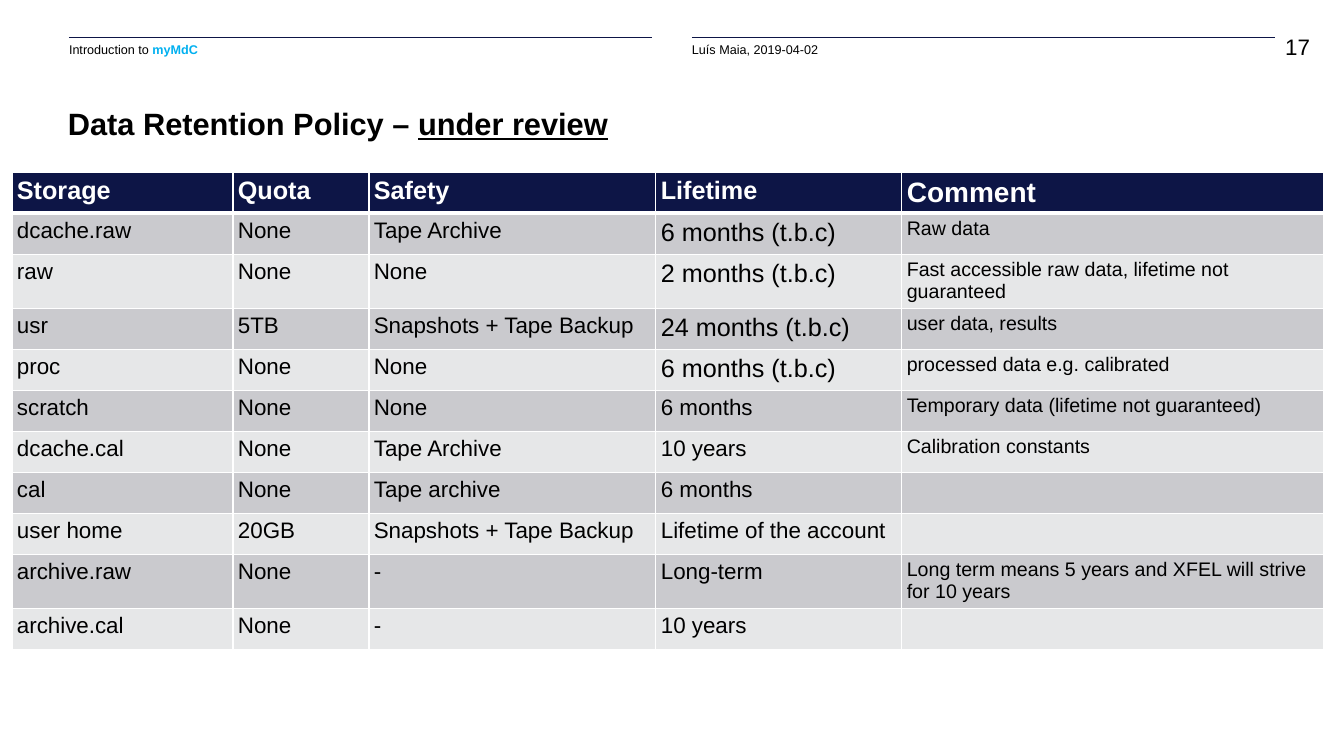
from pptx import Presentation
from pptx.dml.color import RGBColor
from pptx.enum.shapes import MSO_CONNECTOR
from pptx.enum.text import MSO_ANCHOR, MSO_AUTO_SIZE, PP_ALIGN
from pptx.oxml.ns import qn
from pptx.util import Emu, Pt
from lxml import etree

STRAIGHT = MSO_CONNECTOR.STRAIGHT
LEFT, RIGHT = PP_ALIGN.LEFT, PP_ALIGN.RIGHT
TOP, BOTTOM = MSO_ANCHOR.TOP, MSO_ANCHOR.BOTTOM
NO_AUTOFIT = MSO_AUTO_SIZE.NONE

NAVY = RGBColor(0x0D, 0x15, 0x46)
CYAN = RGBColor(0x00, 0xB0, 0xF0)
BLACK = RGBColor(0x00, 0x00, 0x00)
WHITE = RGBColor(0xFF, 0xFF, 0xFF)
DARK_BAND = RGBColor(0xCA, 0xCA, 0xCE)
LIGHT_BAND = RGBColor(0xE6, 0xE7, 0xE8)

FONT = "Arial"
PX_PER_INCH = 100.8
CELL_MARGIN = 5
ROW_HEIGHT = 41
COLUMN_WIDTHS = (221, 136, 287, 246, 422)
HEADER_SIZES = (18, 18, 18, 18, 20)
BODY_SIZES = (16, 16, 16, 16, 14)
TO_CONFIRM = "(t.b.c)"
TO_CONFIRM_SIZE = 18

POLICY = (
    ("Storage", "Quota", "Safety", "Lifetime", "Comment"),
    ("dcache.raw", "None", "Tape Archive", "6 months (t.b.c)", "Raw data"),
    ("raw", "None", "None", "2 months (t.b.c)",
     "Fast accessible raw data, lifetime not guaranteed"),
    ("usr", "5TB", "Snapshots + Tape Backup", "24 months (t.b.c)",
     "user data, results"),
    ("proc", "None", "None", "6 months (t.b.c)",
     "processed data e.g. calibrated"),
    ("scratch", "None", "None", "6 months",
     "Temporary data (lifetime not guaranteed)"),
    ("dcache.cal", "None", "Tape Archive", "10 years",
     "Calibration constants"),
    ("cal", "None", "Tape archive", "6 months", ""),
    ("user home", "20GB", "Snapshots + Tape Backup",
     "Lifetime of the account", ""),
    ("archive.raw", "None", "-", "Long-term",
     "Long term means 5 years and XFEL will strive for 10 years"),
    ("archive.cal", "None", "-", "10 years", ""),
)


def px(n):
    return Emu(round(n * 914400 / PX_PER_INCH))


def add_run(p, text, size, color=BLACK, bold=False, underline=False):
    r = p.add_run()
    r.text = text
    r.font.name = FONT
    r.font.size = Pt(size)
    r.font.color.rgb = color
    r.font.bold = bold
    r.font.underline = underline


def prepare_frame(tf, anchor=TOP, align=LEFT, wrap=True):
    """Remove the insets and return the first paragraph."""
    tf.margin_left = tf.margin_top = tf.margin_right = tf.margin_bottom = 0
    tf.auto_size = NO_AUTOFIT
    tf.word_wrap = wrap
    tf.vertical_anchor = anchor
    p = tf.paragraphs[0]
    p.alignment = align
    return p


def add_label(s, x, y, w, h, align=LEFT, wrap=True):
    """Add an empty text box and return its paragraph."""
    tf = s.shapes.add_textbox(px(x), px(y), px(w), px(h)).text_frame
    return prepare_frame(tf, align=align, wrap=wrap)


def add_rule(s, x, y, w):
    line = s.shapes.add_connector(STRAIGHT, px(x), px(y), px(x + w), px(y))
    line.line.color.rgb = NAVY
    line.line.width = Pt(0.5)
    etree.SubElement(line._element.spPr, qn("a:effectLst"))


def add_title(s):
    title = s.shapes.title
    title.left, title.top, title.width, title.height = (
        px(68), px(56), px(1208), px(86))
    p = prepare_frame(title.text_frame, anchor=BOTTOM)
    add_run(p, "Data Retention Policy – ", 22, bold=True)
    add_run(p, "under review", 22, bold=True, underline=True)


def set_borders(cell, widths):
    """Draw white borders; widths maps a:ln tags to points."""
    tcPr = cell._tc.get_or_add_tcPr()
    for tag, width in widths.items():
        ln = etree.SubElement(tcPr, qn(tag), w=str(Pt(width)))
        fill = etree.SubElement(ln, qn("a:solidFill"))
        etree.SubElement(fill, qn("a:srgbClr"), val=str(WHITE))


def fill_cell(cell, text, row, col):
    header = row == 0
    cell.margin_left = cell.margin_right = px(CELL_MARGIN)
    cell.margin_top = cell.margin_bottom = px(CELL_MARGIN)
    set_borders(cell, {"a:lnL": 1, "a:lnR": 1,
                       "a:lnT": 3 if row == 1 else 1,
                       "a:lnB": 3 if header else 1})
    cell.fill.solid()
    cell.fill.fore_color.rgb = (
        NAVY if header else DARK_BAND if row % 2 else LIGHT_BAND)
    size = (HEADER_SIZES if header else BODY_SIZES)[col]
    if TO_CONFIRM in text:
        size = TO_CONFIRM_SIZE
    p = cell.text_frame.paragraphs[0]
    if text:
        add_run(p, text, size, WHITE if header else BLACK, bold=header)
    else:
        p.font.size = Pt(size)


def add_policy_table(s, x, y):
    table = s.shapes.add_table(
        len(POLICY), len(COLUMN_WIDTHS), px(x), px(y),
        px(sum(COLUMN_WIDTHS)), px(ROW_HEIGHT * len(POLICY))).table
    for column, width in zip(table.columns, COLUMN_WIDTHS):
        column.width = px(width)
    for row, texts in enumerate(POLICY):
        table.rows[row].height = px(ROW_HEIGHT)
        for col, text in enumerate(texts):
            fill_cell(table.cell(row, col), text, row, col)


def main():
    prs = Presentation()
    prs.slide_width, prs.slide_height = px(1344), px(756)
    s = prs.slides.add_slide(prs.slide_layouts.get_by_name("Title Only"))

    for x in (69, 692):
        add_rule(s, x, 37, 583)
    p = add_label(s, 69, 42, 583, 14)
    add_run(p, "Introduction to ", 9)
    add_run(p, "myMdC", 9, CYAN, bold=True)
    add_run(add_label(s, 692, 42, 583, 14), "Luís Maia, 2019-04-02", 9)
    add_run(add_label(s, 1284, 33, 26, 24, RIGHT, wrap=False), "17", 16)

    add_title(s)
    add_policy_table(s, 12, 172)
    prs.save("out.pptx")


if __name__ == "__main__":
    main()
